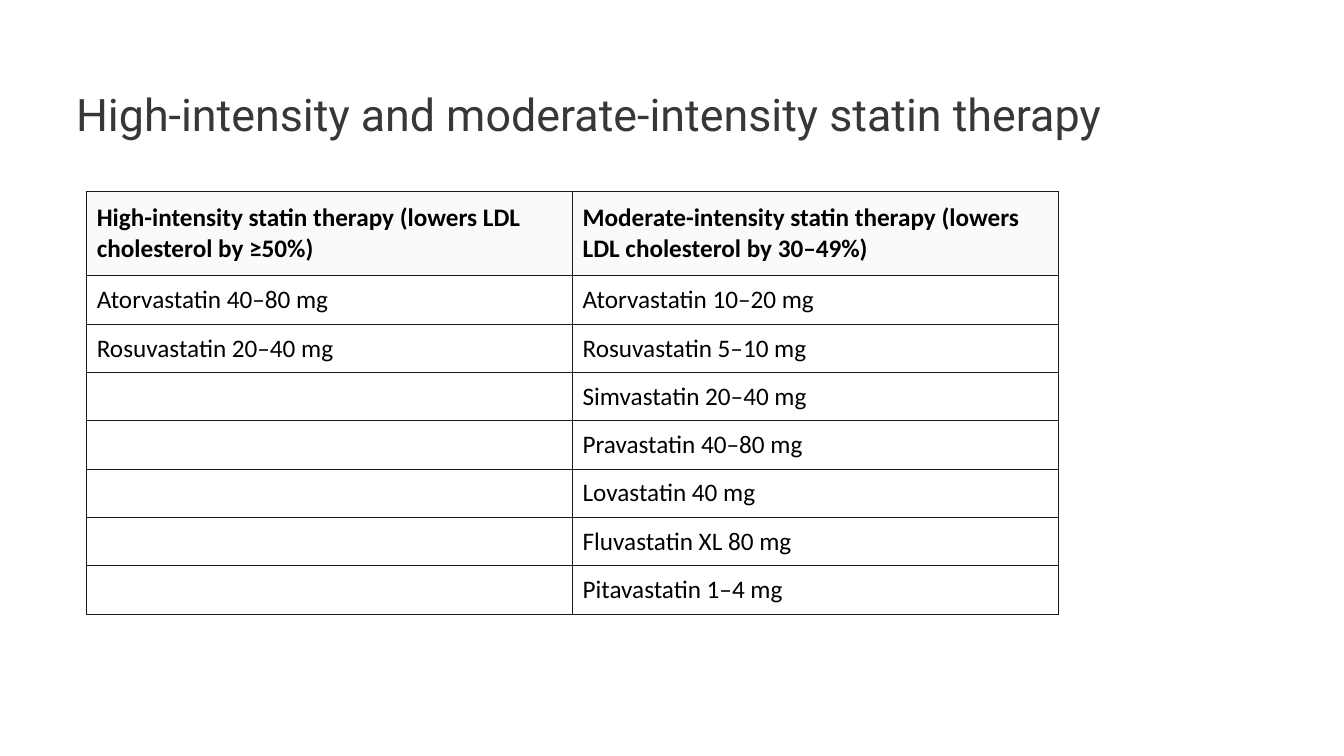
import lxml.etree
import pptx
import pptx.dml.color
import pptx.enum.text
import pptx.oxml.ns
import pptx.util

Pt = pptx.util.Pt
RGBColor = pptx.dml.color.RGBColor
MIDDLE = pptx.enum.text.MSO_ANCHOR.MIDDLE

WHITE = RGBColor(0xFF, 0xFF, 0xFF)
BLACK = RGBColor(0x00, 0x00, 0x00)
HEADING_GREY = RGBColor(0x38, 0x36, 0x36)
HEADER_FILL = RGBColor(0xFA, 0xFA, 0xFA)
BORDER = RGBColor(0x1A, 0x1A, 0x1A)

HEADING = "High-intensity and moderate-intensity statin therapy"
THERAPIES = [
    ("High-intensity statin therapy (lowers LDL cholesterol by ≥50%)",
     "Moderate-intensity statin therapy (lowers LDL cholesterol by 30–49%)"),
    ("Atorvastatin 40–80 mg", "Atorvastatin 10–20 mg"),
    ("Rosuvastatin 20–40 mg", "Rosuvastatin 5–10 mg"),
    ("", "Simvastatin 20–40 mg"),
    ("", "Pravastatin 40–80 mg"),
    ("", "Lovastatin 40 mg"),
    ("", "Fluvastatin XL 80 mg"),
    ("", "Pitavastatin 1–4 mg"),
]
HEADER_HEIGHT = Pt(60.3)


def add_heading(slide, left, top, width, height):
    """Place the slide title in the given box."""
    heading = slide.shapes.title
    heading.left, heading.top, heading.width, heading.height = left, top, width, height
    heading.fill.solid()
    heading.fill.fore_color.rgb = WHITE
    frame = heading.text_frame
    frame.text = HEADING
    frame.word_wrap = False
    frame.auto_size = pptx.enum.text.MSO_AUTO_SIZE.NONE
    frame.vertical_anchor = MIDDLE
    frame.margin_left = frame.margin_right = frame.margin_top = frame.margin_bottom = 0
    paragraph = frame.paragraphs[0]
    paragraph.alignment = pptx.enum.text.PP_ALIGN.CENTER
    paragraph.font.name = "Roboto"
    paragraph.font.size = Pt(32)
    paragraph.font.color.rgb = HEADING_GREY


def add_borders(cell):
    """Draw a thin line on all four sides of a cell."""
    qn = pptx.oxml.ns.qn
    properties = cell._tc.get_or_add_tcPr()
    for side in ("a:lnL", "a:lnR", "a:lnT", "a:lnB"):
        line = lxml.etree.SubElement(properties, qn(side), w=str(Pt(0.75)))
        fill = lxml.etree.SubElement(line, qn("a:solidFill"))
        lxml.etree.SubElement(fill, qn("a:srgbClr"), val=str(BORDER))


def fill_cell(cell, wording, is_header):
    """Write and format one cell of the therapy table."""
    add_borders(cell)
    if is_header:
        cell.fill.solid()
        cell.fill.fore_color.rgb = HEADER_FILL
    else:
        cell.fill.background()
    cell.vertical_anchor = MIDDLE
    cell.text = wording
    font = cell.text_frame.paragraphs[0].font
    font.name = "Calibri"
    font.size = Pt(18)
    font.bold = is_header
    font.color.rgb = BLACK


def add_therapies(slide, left, top, width, height):
    """Place the table of statin doses in the given box."""
    therapies = slide.shapes.add_table(
        len(THERAPIES), len(THERAPIES[0]), left, top, width, height).table
    therapies.first_row = therapies.horz_banding = False
    dose_height = (height - HEADER_HEIGHT) // (len(THERAPIES) - 1)
    for index, doses in enumerate(THERAPIES):
        is_header = index == 0
        therapies.rows[index].height = HEADER_HEIGHT if is_header else dose_height
        for column, wording in enumerate(doses):
            fill_cell(therapies.cell(index, column), wording, is_header)


def main():
    """Build and save the slide."""
    deck = pptx.Presentation()
    deck.slide_width, deck.slide_height = Pt(960), Pt(540)
    slide = deck.slides.add_slide(deck.slide_layouts[5])
    add_therapies(slide, Pt(62), Pt(136.8), Pt(694), Pt(301.8))
    add_heading(slide, Pt(46.8), Pt(62), Pt(748), Pt(38.8))
    deck.save("out.pptx")


if __name__ == "__main__":
    main()
